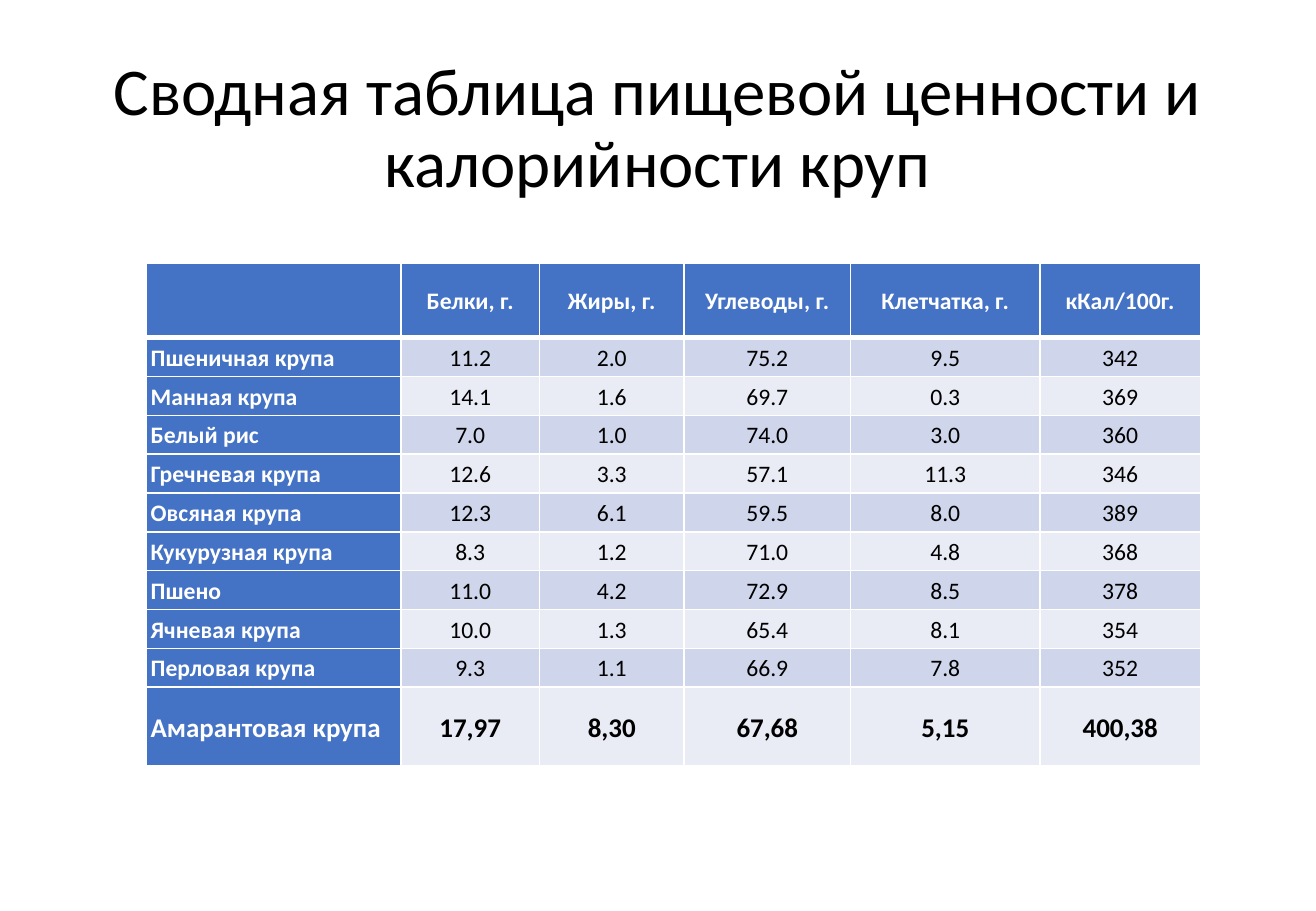
from lxml import etree
from pptx import Presentation
from pptx import util as u
from pptx.dml.color import RGBColor
from pptx.enum import text
from pptx.oxml.ns import qn

FONT = "Calibri"
COLORS = {
    "accent": "4472C4",
    "band_dark": "CFD5EA",
    "band_light": "E9EBF5",
    "white": "FFFFFF",
    "black": "000000",
}
TITLE = "Сводная таблица пищевой ценности и калорийности круп"
COLUMN_WIDTHS = [2.1, 1.14, 1.19, 1.37, 1.56, 1.32]
ROW_HEIGHTS = [0.61] + [0.32] * 9 + [0.65]
LABEL_INDENT = 0.04
ROWS = [
    ["", "Белки, г.", "Жиры, г.", "Углеводы, г.", "Клетчатка, г.", "кКал/100г."],
    ["Пшеничная крупа", "11.2", "2.0", "75.2", "9.5", "342"],
    ["Манная крупа", "14.1", "1.6", "69.7", "0.3", "369"],
    ["Белый рис", "7.0", "1.0", "74.0", "3.0", "360"],
    ["Гречневая крупа", "12.6", "3.3", "57.1", "11.3", "346"],
    ["Овсяная крупа", "12.3", "6.1", "59.5", "8.0", "389"],
    ["Кукурузная крупа", "8.3", "1.2", "71.0", "4.8", "368"],
    ["Пшено", "11.0", "4.2", "72.9", "8.5", "378"],
    ["Ячневая крупа", "10.0", "1.3", "65.4", "8.1", "354"],
    ["Перловая крупа", "9.3", "1.1", "66.9", "7.8", "352"],
    ["Амарантовая крупа", "17,97", "8,30", "67,68", "5,15", "400,38"],
]


def color(name):
    return RGBColor.from_string(COLORS[name])


def add_span(para, words, size, ink, bold=False):
    span = para.add_run()
    span.text = words
    span.font.name = FONT
    span.font.size = u.Pt(size)
    span.font.bold = bold
    span.font.color.rgb = color(ink)


def add_title(page):
    box = page.shapes.add_textbox(u.Inches(0.74), u.Inches(0.53),
                                  u.Inches(9.34), u.Inches(1.08))
    frame = box.text_frame
    frame.word_wrap = True
    frame.vertical_anchor = text.MSO_ANCHOR.MIDDLE
    para = frame.paragraphs[0]
    para.alignment = text.PP_ALIGN.CENTER
    para.line_spacing = 0.9
    add_span(para, TITLE, 39.6, "black")


def set_borders(cell, top, bottom):
    """Draw white cell edges; top and bottom are widths in points."""
    properties = cell._tc.get_or_add_tcPr()
    for side, width in (("L", 1), ("R", 1), ("T", top), ("B", bottom)):
        line = etree.SubElement(properties, qn(f"a:ln{side}"), w=str(u.Pt(width)))
        fill = etree.SubElement(line, qn("a:solidFill"))
        etree.SubElement(fill, qn("a:srgbClr"), val=COLORS["white"])


def fill_cell(cell, words, row, column):
    is_header, is_label = row == 0, column == 0
    is_last = row == len(ROWS) - 1
    on_accent = is_header or is_label
    band = "band_dark" if row % 2 else "band_light"

    set_borders(cell, top=3 if row == 1 else 1, bottom=3 if is_header else 1)
    cell.fill.solid()
    cell.fill.fore_color.rgb = color("accent" if on_accent else band)
    cell.vertical_anchor = text.MSO_ANCHOR.MIDDLE
    cell.margin_left = u.Inches(LABEL_INDENT if is_label else 0)
    cell.margin_right = cell.margin_top = cell.margin_bottom = 0
    if not words:
        return
    para = cell.text_frame.paragraphs[0]
    para.alignment = text.PP_ALIGN.JUSTIFY if is_label else text.PP_ALIGN.CENTER
    para.line_spacing = 1.07
    para.space_after = u.Pt(8)
    add_span(para, words, 16 if is_last else 14,
             "white" if on_accent else "black", bold=on_accent or is_last)


def add_nutrition_table(page):
    frame = page.shapes.add_table(
        len(ROWS), len(COLUMN_WIDTHS), u.Inches(1.2), u.Inches(2.17),
        u.Inches(sum(COLUMN_WIDTHS)), u.Inches(sum(ROW_HEIGHTS)))
    table = frame.table
    table.first_col = True
    for column, width in zip(table.columns, COLUMN_WIDTHS):
        column.width = u.Inches(width)
    for row, height in zip(table.rows, ROW_HEIGHTS):
        row.height = u.Inches(height)
    for row, values in enumerate(ROWS):
        for column, words in enumerate(values):
            fill_cell(table.cell(row, column), words, row, column)


def main():
    deck = Presentation()
    deck.slide_width = u.Inches(10.83)
    deck.slide_height = u.Inches(7.5)
    page = deck.slides.add_slide(deck.slide_layouts[6])
    add_title(page)
    add_nutrition_table(page)
    deck.save("out.pptx")


if __name__ == "__main__":
    main()
